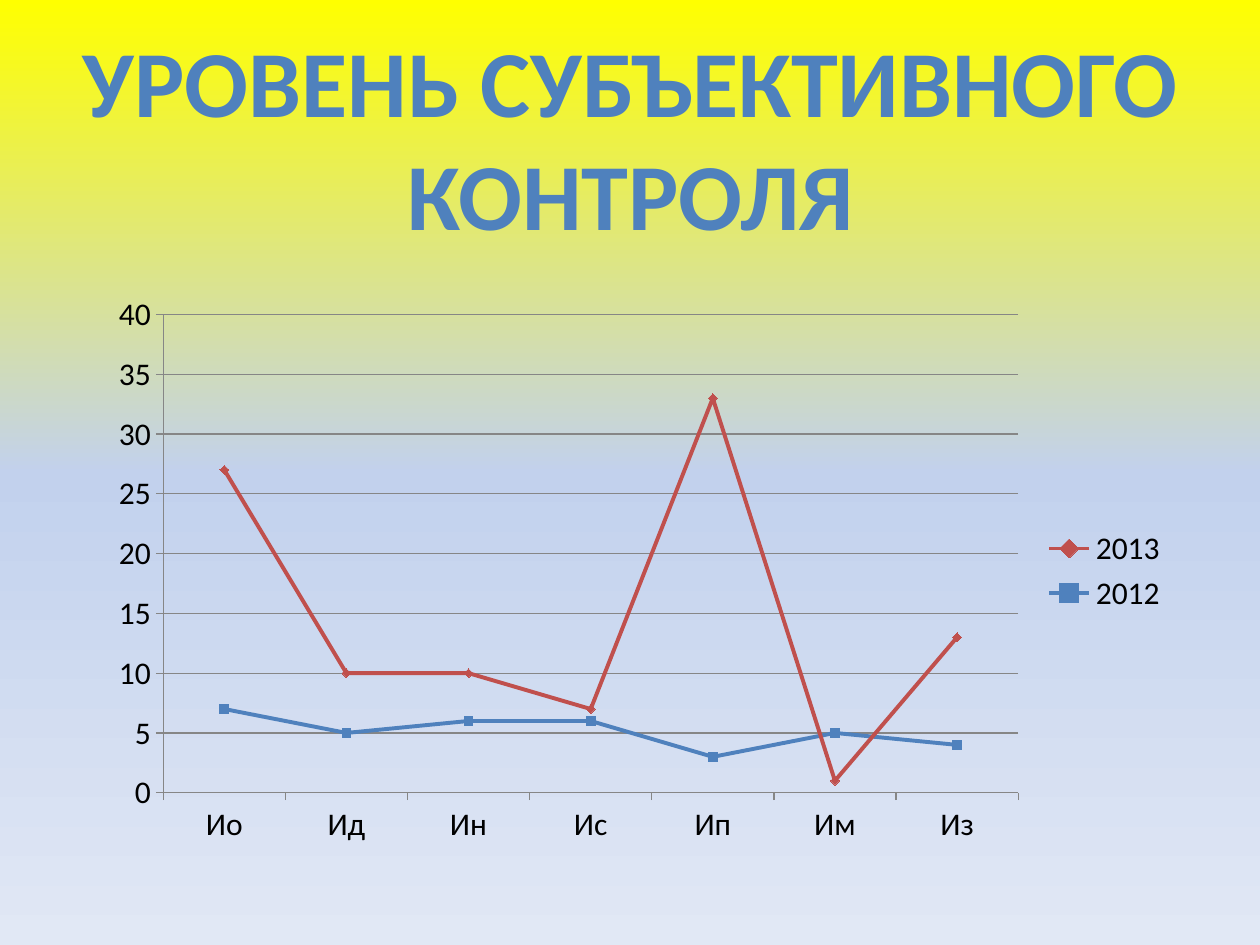
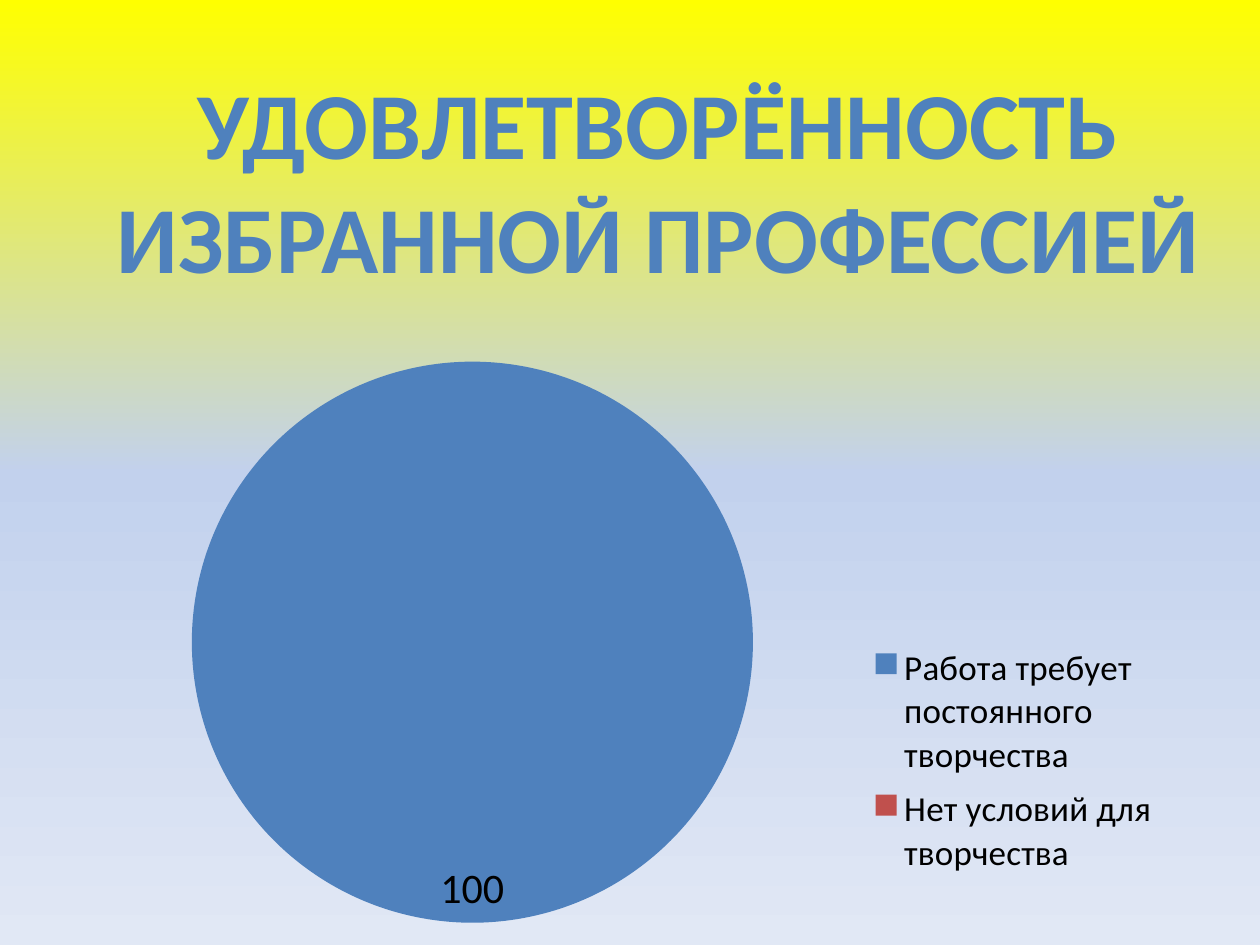
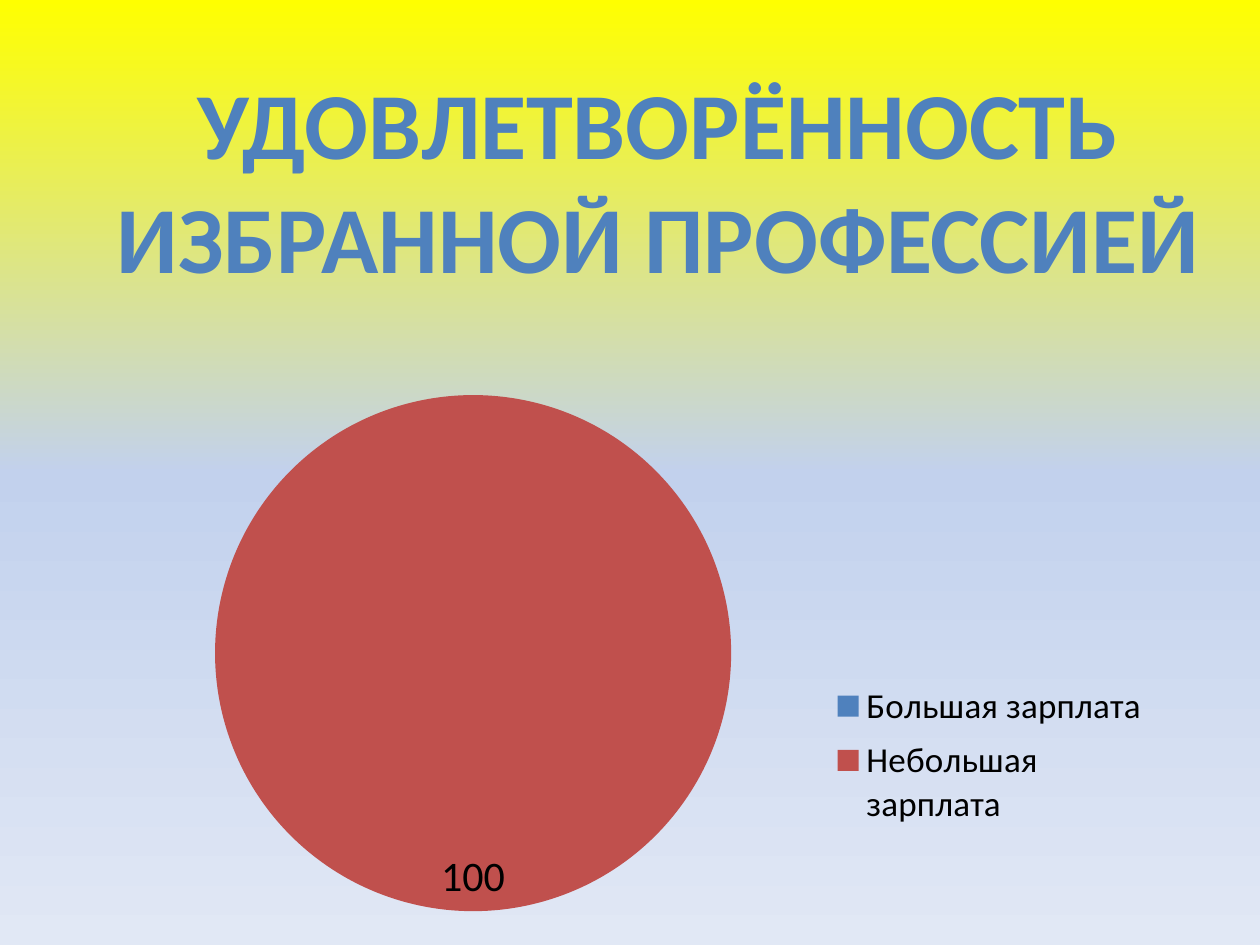
from lxml import etree
from pptx import Presentation
from pptx.chart.data import CategoryChartData
from pptx.dml.color import RGBColor
from pptx.enum.chart import (XL_CHART_TYPE, XL_LABEL_POSITION, XL_LEGEND_POSITION,
                             XL_MARKER_STYLE, XL_TICK_MARK)
from pptx.enum.text import MSO_AUTO_SIZE, PP_ALIGN
from pptx.oxml.ns import qn
from pptx.util import Inches, Pt

LINE_CHART = XL_CHART_TYPE.LINE_MARKERS_STACKED
PIE_CHART = XL_CHART_TYPE.PIE
LEGEND_RIGHT = XL_LEGEND_POSITION.RIGHT
INSIDE_END = XL_LABEL_POSITION.INSIDE_END
TICK_OUTSIDE = XL_TICK_MARK.OUTSIDE
MARKERS = (XL_MARKER_STYLE.SQUARE, XL_MARKER_STYLE.DIAMOND)
FIT_SHAPE = MSO_AUTO_SIZE.SHAPE_TO_FIT_TEXT
CENTER = PP_ALIGN.CENTER

# Shared style
FONT = "Calibri"
BLUE, RED, BLACK, GREY = "4F81BD", "C0504D", "000000", "868686"
ACCENTS = (BLUE, RED)
BACKGROUND_STOPS = ((0, "FFFF00"), (50, "C2D1ED"), (100, "E1E8F5"))
SATISFACTION_TITLE = ("УДОВЛЕТВОРЁННОСТЬ", "ИЗБРАННОЙ ПРОФЕССИЕЙ")
SATISFACTION_BOX = (0.78, 0.47, 8.89, 1.92)


def rgb(hex_color):
    return RGBColor.from_string(hex_color)


def style_font(font, size, color=BLACK, bold=False):
    font.name = FONT
    font.size = Pt(size)
    font.bold = bold
    font.color.rgb = rgb(color)


def set_background(master):
    fill = master.background.fill
    fill.gradient()
    fill.gradient_angle = 270
    stop_list = master.element.find(".//" + qn("a:gsLst"))
    for stop in list(stop_list):
        stop_list.remove(stop)
    for percent, color in BACKGROUND_STOPS:
        stop = etree.SubElement(stop_list, qn("a:gs"), pos=str(percent * 1000))
        etree.SubElement(stop, qn("a:srgbClr"), val=color)


def add_title(slide, lines, box):
    text_box = slide.shapes.add_textbox(*map(Inches, box))
    frame = text_box.text_frame
    frame.word_wrap = False
    frame.auto_size = FIT_SHAPE
    frame.text = "\n".join(lines)
    for paragraph in frame.paragraphs:
        paragraph.alignment = CENTER
        style_font(paragraph.font, 54, BLUE, bold=True)


def set_layout(element, left, top, width, height, inner=False):
    """Place a chart part by fractions of the chart's size."""
    layout = element.find(qn("c:layout"))
    if layout is None:
        layout = etree.Element(qn("c:layout"))
        position = element.find(qn("c:legendPos"))
        if position is None:
            element.insert(0, layout)
        else:
            position.addnext(layout)
    for child in list(layout):
        layout.remove(child)
    manual = etree.SubElement(layout, qn("c:manualLayout"))
    settings = [("layoutTarget", "inner")] if inner else []
    settings += [("xMode", "edge"), ("yMode", "edge"),
                 ("x", left), ("y", top), ("w", width), ("h", height)]
    for name, value in settings:
        etree.SubElement(manual, qn("c:" + name), val=str(value))


def add_chart(slide, chart_type, box, categories, series, font_size, legend_size, plot_box):
    data = CategoryChartData()
    data.categories = categories
    for name, values in series:
        data.add_series(name, values)
    chart = slide.shapes.add_chart(chart_type, *map(Inches, box), data).chart
    chart.has_title = False
    style_font(chart.font, font_size)
    chart.has_legend = True
    chart.legend.position = LEGEND_RIGHT
    chart.legend.include_in_layout = False
    style_font(chart.legend.font, legend_size)
    plot_area = chart.element.find(".//" + qn("c:plotArea"))
    set_layout(plot_area, *plot_box, inner=True)
    return chart


def add_line_chart(slide, box, categories, series, plot_box):
    chart = add_chart(slide, LINE_CHART, box, categories, series, 18, 18, plot_box)
    for line, color, marker in zip(chart.plots[0].series, ACCENTS, MARKERS):
        line.smooth = False
        line.format.line.color.rgb = rgb(color)
        line.format.line.width = Pt(2.25)
        line.marker.style = marker
        line.marker.size = 5
        line.marker.format.fill.solid()
        line.marker.format.fill.fore_color.rgb = rgb(color)
        line.marker.format.line.color.rgb = rgb(color)
    values = chart.value_axis
    values.minimum_scale, values.maximum_scale, values.major_unit = 0, 40, 5
    values.has_major_gridlines = True
    values.major_gridlines.format.line.color.rgb = rgb(GREY)
    for axis in (values, chart.category_axis):
        axis.major_tick_mark = TICK_OUTSIDE
        axis.format.line.color.rgb = rgb(GREY)


def add_pie_chart(slide, box, categories, values, plot_box, legend_box):
    chart = add_chart(slide, PIE_CHART, box, categories, [("Series 1", values)],
                      10, 20, plot_box)
    set_layout(chart.element.find(".//" + qn("c:legend")), *legend_box)
    plot = chart.plots[0]
    plot.vary_by_categories = True
    pie = plot.series[0]
    for index, color in enumerate(ACCENTS):
        fill = pie.points[index].format.fill
        fill.solid()
        fill.fore_color.rgb = rgb(color)
    explosion = etree.Element(qn("c:explosion"), val="25")
    pie._element.find(qn("c:tx")).addnext(explosion)
    plot.has_data_labels = True
    labels = plot.data_labels
    labels.show_value = True
    labels.show_percentage = False
    labels.position = INSIDE_END
    style_font(labels.font, 24)


def main():
    presentation = Presentation()
    presentation.slide_width = Inches(10)
    presentation.slide_height = Inches(7.5)
    set_background(presentation.slide_master)
    blank = presentation.slide_layouts[6]

    # Subjective control
    slide = presentation.slides.add_slide(blank)
    add_title(slide, ("УРОВЕНЬ СУБЪЕКТИВНОГО", "КОНТРОЛЯ"), (0.51, 0.13, 8.99, 1.92))
    add_line_chart(slide, (0.78, 2.27, 8.59, 4.52),
                   ("Ио", "Ид", "Ин", "Ис", "Ип", "Им", "Из"),
                   (("2012", (7, 5, 6, 6, 3, 5, 4)),
                    ("2013", (20, 5, 4, 1, 30, -4, 9))),
                   plot_box=(0.06, 0.05, 0.79, 0.84))

    # Satisfaction with the profession: creativity, then pay
    pies = (
        ((0.7, 1.64, 8.59, 5.86),
         ("Работа требует постоянного творчества", "Нет условий для творчества"),
         (100, 0), (0.03, 0.02, 0.65, 0.95), (0.72, 0.58, 0.27, 0.34)),
        ((0.94, 1.95, 8.28, 5.39),
         ("Большая зарплата", "Небольшая зарплата"),
         (0, 100), (0.03, 0.03, 0.62, 0.95), (0.68, 0.63, 0.31, 0.24)),
    )
    for pie in pies:
        slide = presentation.slides.add_slide(blank)
        add_pie_chart(slide, *pie)
        add_title(slide, SATISFACTION_TITLE, SATISFACTION_BOX)

    presentation.save("out.pptx")


if __name__ == "__main__":
    main()
